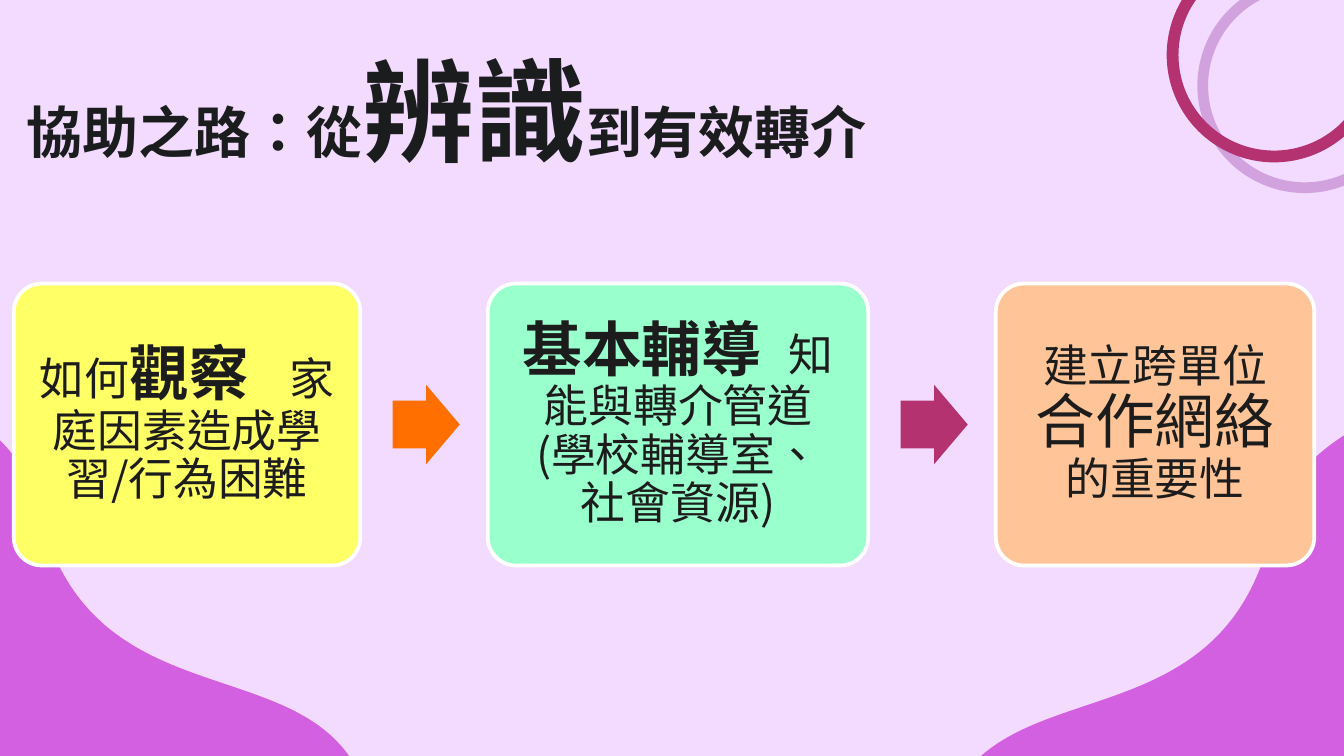
"""Build the slide on the road from recognising to effective referral."""
from dataclasses import dataclass
from typing import Any

from lxml.etree import Element, SubElement
from pptx import Presentation
from pptx.dml.color import RGBColor
from pptx.enum.shapes import MSO_SHAPE
from pptx.enum.text import MSO_ANCHOR, PP_ALIGN
from pptx.oxml.ns import qn
from pptx.util import Cm, Pt

FONT = "Noto Sans CJK SC"
TITLE_INK, CARD_INK = "1B1C1D", "1C1C1C"
CARD_LEFT, CARD_TOP, CARD_HEIGHT, CARD_GAP = 0.26, 5.36, 5.33, 2.41
ARROW_OFFSET, ARROW_WIDTH, ARROW_HEIGHT = 0.61, 1.27, 1.5
Point = tuple[float, float]


@dataclass(frozen=True)
class Span:
    text: str
    size: int
    bold: bool = False
    spacing: float = 0


@dataclass(frozen=True)
class Card:
    width: float
    fill: str
    inset: float
    spans: tuple[Span, ...]
    arrow: str = ""


@dataclass(frozen=True)
class Ring:
    left: float
    top: float
    thickness: float
    fill: str


@dataclass(frozen=True)
class Curve:
    first_control: Point
    second_control: Point
    end: Point


TITLE = (Span("協助之路：從", 30, True), Span("辨識", 60, True),
         Span("到有效轉介", 30, True))
CARDS = (
    Card(6.55, "FFFF66", 0.25,
         (Span("如何", 24), Span("觀察", 32, True), Span(" ", 32, True, 14.3),
          Span("家庭因素造成學習/行為困難", 24)), "FF6F00"),
    Card(7.19, "99FFCC", 0.34,
         (Span("基本輔導", 32, True), Span(" ", 32, True, 7.2),
          Span("知能與轉介管道 (學校輔導室、社會資源)", 24)), "B3326F"),
    Card(6.02, "FFC599", 0.25,
         (Span("建立跨單位", 24), Span("合作網絡", 32), Span("的重要性", 24))),
)
RINGS = (Ring(22.63, -0.41, 0.05, "D2A2DF"), Ring(22.05, -0.99, 0.055, "B3326F"))
HILL_START, HILL_CORNER = (-4.67, 6.76), (-4.32, 17.6)
HILL = (
    Curve((-4.67, 6.76), (0.08, 6.81), (0.74, 9.63)),
    Curve((1.68, 13.64), (5.69, 12.24), (6.81, 14.66)),
    Curve((7.44, 16.05), (7.29, 17.37), (7.29, 17.37)),
)


def colour(value: str) -> RGBColor:
    """Return the colour for a hex string."""
    return RGBColor.from_string(value)


def apply(target: Any, values: dict[str, Any]) -> None:
    """Set every attribute of the target from the values."""
    for name, value in values.items():
        setattr(target, name, value)


def paint(shape: Any, fill: str, line: str = "") -> None:
    """Give a shape a plain fill and an optional outline."""
    shape.shadow.inherit = False
    shape.fill.solid()
    shape.fill.fore_color.rgb = colour(fill)
    if line:
        shape.line.color.rgb = colour(line)
        shape.line.width = Pt(2)
    else:
        shape.line.fill.background()


def write(box: Any, spans: tuple[Span, ...], ink: str, inset: float,
          anchor: MSO_ANCHOR, layout: dict[str, Any]) -> None:
    """Write one paragraph of spans into a box."""
    margins = {f"margin_{side}": Cm(inset) for side in ("left", "top", "right", "bottom")}
    apply(box.text_frame, {"word_wrap": True, "vertical_anchor": anchor, **margins})
    para = box.text_frame.paragraphs[0]
    apply(para, layout)
    for span in spans:
        run = para.add_run()
        run.text = span.text
        apply(run.font, {"name": FONT, "size": Pt(span.size), "bold": span.bold})
        run.font.color.rgb = colour(ink)
        properties = run.font._element
        properties.set("lang", "zh-TW")
        if span.spacing:
            properties.set("spc", str(round(span.spacing * 100)))
        SubElement(properties, qn("a:ea")).set("typeface", FONT)


def draw_hill(page: Any, mirrored: bool) -> None:
    """Draw a curved bottom corner hill, mirrored for the right side."""
    def place(point: Point) -> tuple[int, int]:
        """Return a point in slide units on the chosen side."""
        x, y = point
        return (Cm(24.77 - x), Cm(y + 0.41)) if mirrored else (Cm(x), Cm(y))

    builder = page.shapes.build_freeform(*place(HILL_START))
    corners = [curve.end for curve in HILL] + [HILL_CORNER]
    builder.add_line_segments([place(corner) for corner in corners], close=True)
    shape = builder.convert_to_shape()
    segments = list(shape._element.iter(qn("a:lnTo")))
    for segment, curve in zip(segments, HILL):
        segment.tag = qn("a:cubicBezTo")
        for index, control in enumerate((curve.first_control, curve.second_control)):
            x, y = place(control)
            point = Element(qn("a:pt"), x=str(x - shape.left), y=str(y - shape.top))
            segment.insert(index, point)
    paint(shape, "D260E0")


def draw_ring(page: Any, ring: Ring) -> None:
    """Draw a ring in the top right corner."""
    shape = page.shapes.add_shape(MSO_SHAPE.DONUT, Cm(ring.left), Cm(ring.top),
                                  Cm(4.06), Cm(4.06))
    shape.adjustments[0] = ring.thickness
    paint(shape, ring.fill)


def draw_card(page: Any, card: Card, left: float) -> None:
    """Draw a card and the arrow that follows it."""
    box = page.shapes.add_shape(MSO_SHAPE.ROUNDED_RECTANGLE, Cm(left), Cm(CARD_TOP),
                                Cm(card.width), Cm(CARD_HEIGHT))
    box.adjustments[0] = 0.1
    paint(box, card.fill, "FFFFFF")
    write(box, card.spans, CARD_INK, card.inset, MSO_ANCHOR.MIDDLE,
          {"alignment": PP_ALIGN.CENTER, "line_spacing": 0.9})
    if card.arrow:
        arrow = page.shapes.add_shape(
            MSO_SHAPE.RIGHT_ARROW, Cm(left + card.width + ARROW_OFFSET),
            Cm(CARD_TOP + (CARD_HEIGHT - ARROW_HEIGHT) / 2),
            Cm(ARROW_WIDTH), Cm(ARROW_HEIGHT))
        arrow.adjustments[0] = 0.6
        paint(arrow, card.arrow)


def main() -> None:
    """Build and save the deck."""
    deck = Presentation()
    apply(deck, {"slide_width": Cm(25.4), "slide_height": Cm(14.29)})
    page = deck.slides.add_slide(deck.slide_layouts[6])
    page.background.fill.solid()
    page.background.fill.fore_color.rgb = colour("F2DBFF")
    for mirrored in (False, True):
        draw_hill(page, mirrored)
    for ring in RINGS:
        draw_ring(page, ring)
    title = page.shapes.add_textbox(Cm(0.25), Cm(0.53), Cm(21.44), Cm(2.57))
    write(title, TITLE, TITLE_INK, 0.25, MSO_ANCHOR.TOP,
          {"alignment": PP_ALIGN.LEFT, "line_spacing": 1.0})
    left = CARD_LEFT
    for card in CARDS:
        draw_card(page, card, left)
        left += card.width + CARD_GAP
    deck.save("out.pptx")


if __name__ == "__main__":
    main()
